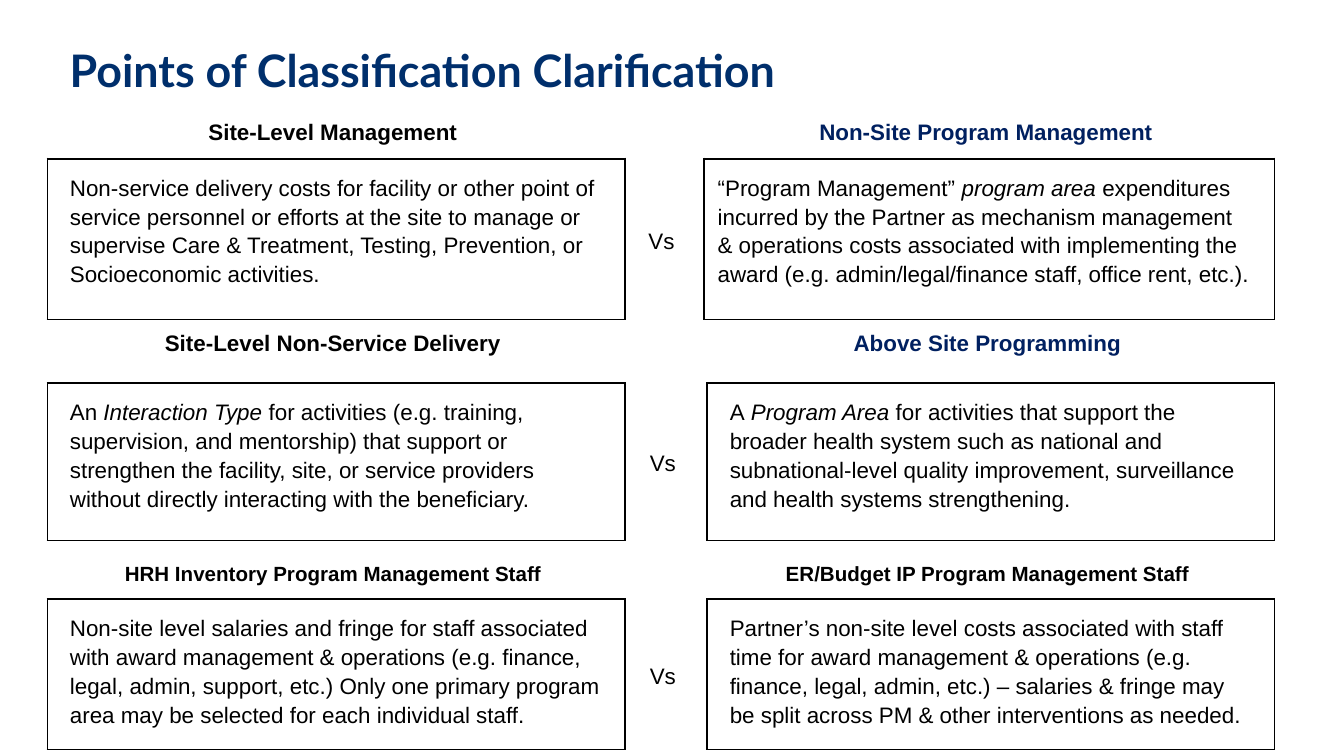
from lxml import etree
from pptx import Presentation
from pptx import util as u
from pptx.dml.color import RGBColor
from pptx.enum import text
from pptx.oxml.ns import qn

COLORS = {"title": "002F6C", "ink": "000000", "navy": "002060"}
NO_STYLE = "{2D5ABB26-0587-4C30-8999-92F81FD0307C}"
THIN, THICK = 0.56, 1.11
CENTER, LEFT = text.PP_ALIGN.CENTER, text.PP_ALIGN.LEFT
TOP, MIDDLE, BOTTOM = (text.MSO_ANCHOR.TOP, text.MSO_ANCHOR.MIDDLE,
                       text.MSO_ANCHOR.BOTTOM)

# Each comparison: box, column widths, row heights, headings, definitions.
# Definitions are lists of (words, italic).
COMPARISONS = [
    dict(
        box=(0.35, 0.75, 9.13, 1.61), cols=(4.3, 0.59, 4.24), rows=(0.24, 1.2),
        headings=("Site-Level Management", "Non-Site Program Management"),
        right_color="navy", size=12, anchor=BOTTOM, before=(0, 0), indents=(0.07, 0),
        definitions=(
            [("Non-service delivery costs for facility or other point of service personnel or "
              "efforts at the site to manage or supervise Care & Treatment, Testing, "
              "Prevention, or Socioeconomic activities.", False)],
            [("“Program Management” ", False), ("program area", True),
             (" expenditures incurred by the Partner as mechanism management & operations "
              "costs associated with implementing the award (e.g. admin/legal/finance staff, "
              "office rent, etc.).", False)])),
    dict(
        box=(0.35, 2.23, 9.13, 1.79), cols=(4.3, 0.61, 4.22), rows=(0.62, 1.17),
        headings=("Site-Level Non-Service Delivery", "Above Site Programming"),
        right_color="navy", size=12, anchor=MIDDLE, before=(12, 12), indents=(0.07, 0.07),
        definitions=(
            [("An ", False), ("Interaction Type", True),
             (" for activities (e.g. training, supervision, and mentorship) that support or "
              "strengthen the facility, site, or service providers without directly "
              "interacting with the beneficiary.", False)],
            [("A", False), (" Program Area", True),
             (" for activities that support the broader health system such as national and "
              "subnational-level quality improvement, surveillance and health systems "
              "strengthening.", False)])),
    dict(
        box=(0.35, 3.91, 9.13, 1.65), cols=(4.3, 0.61, 4.22), rows=(0.55, 1),
        headings=("HRH Inventory Program Management Staff",
                  "ER/Budget IP Program Management Staff"),
        right_color="ink", size=11, anchor=BOTTOM, before=(0, 12), indents=(0.07, 0.07),
        definitions=(
            [("Non-site level salaries and fringe for staff associated with award management "
              "& operations (e.g. finance, legal, admin, support, etc.) Only one primary "
              "program area may be selected for each individual staff.", False)],
            [("Partner’s non-site level costs associated with staff time for award management "
              "& operations (e.g. finance, legal, admin, etc.) – salaries & fringe may be "
              "split across PM & other interventions as needed.", False)])),
]


def add_run(paragraph, words, size, color="ink", bold=False, italic=False, font="Arial"):
    run = paragraph.add_run()
    run.text = words
    run.font.size = u.Pt(size)
    run.font.name = font
    run.font.bold = bold
    run.font.italic = italic
    run.font.color.rgb = RGBColor.from_string(COLORS[color])


def set_margins(holder):
    for side in ("left", "right", "top", "bottom"):
        setattr(holder, f"margin_{side}", u.Inches(0.1))


def set_borders(cell, **widths):
    """Draw the given sides (L, R, T, B), widths in points."""
    props = cell._tc.get_or_add_tcPr()
    drawn = [side for side in "LRTB" if side in widths]
    for place, side in enumerate(drawn):
        line = etree.Element(qn(f"a:ln{side}"), w=str(u.Pt(widths[side])))
        fill = etree.SubElement(line, qn("a:solidFill"))
        etree.SubElement(fill, qn("a:srgbClr"), val=COLORS["ink"])
        props.insert(place, line)


def fill_cell(cell, runs, size=12, anchor=TOP, align=LEFT, indent=0.07, before=0):
    """Format a cell and add its runs, each (words, run options)."""
    set_margins(cell)
    cell.vertical_anchor = anchor
    cell.fill.background()
    paragraph = cell.text_frame.paragraphs[0]
    paragraph.alignment = align
    paragraph.line_spacing = 1.15
    paragraph.space_before = u.Pt(before)
    props = paragraph._p.get_or_add_pPr()
    props.set("marL", str(u.Inches(indent)))
    props.set("marR", str(u.Inches(0.07)))
    for words, options in runs:
        add_run(paragraph, words, size, **options)
    # The end mark keeps the default text size from growing the row
    etree.SubElement(paragraph._p, qn("a:endParaRPr"), sz=str(size * 100))


def add_title(slide, box):
    frame = slide.shapes.add_textbox(*map(u.Inches, box)).text_frame
    frame.word_wrap = True
    frame.vertical_anchor = BOTTOM
    set_margins(frame)
    add_run(frame.paragraphs[0], "Points of Classification Clarification", 24,
            "title", bold=True, font="Lato")


def add_comparison(slide, box, cols, rows, headings, right_color, size, anchor,
                   before, indents, definitions):
    frame = slide.shapes.add_table(2, 3, *map(u.Inches, box))
    table = frame.table
    table.first_row = table.horz_banding = False
    table._tbl.tblPr.find(qn("a:tableStyleId")).text = NO_STYLE
    for column, width in zip(table.columns, cols):
        column.width = u.Inches(width)
    for row, height in zip(table.rows, rows):
        row.height = u.Inches(height)
    frame.height = u.Inches(box[3])  # row heights are minimums within this

    # Headings and definitions, left and right
    for side, col in enumerate((0, 2)):
        heading = table.cell(0, col)
        color = ("ink", right_color)[side]
        fill_cell(heading, [(headings[side], dict(color=color, bold=True)), (" ", {})],
                  size, anchor, CENTER, before=before[side])
        set_borders(heading, B=THICK)

        definition = table.cell(1, col)
        fill_cell(definition,
                  [(words, dict(italic=italic)) for words, italic in definitions[side]],
                  indent=indents[side])
        left, right = ((THIN, THICK), (THICK, THIN))[side]
        set_borders(definition, L=left, R=right, T=THICK, B=THIN)

    # Middle column
    fill_cell(table.cell(0, 1), [], size=10)
    versus = table.cell(1, 1)
    fill_cell(versus, [("Vs ", {})], anchor=MIDDLE, align=CENTER)
    set_borders(versus, L=THICK, R=THICK)


def main():
    prs = Presentation()
    prs.slide_width = u.Inches(10)
    prs.slide_height = prs.slide_width * 9 // 16
    slide = prs.slides.add_slide(prs.slide_layouts[6])
    add_title(slide, (0.42, 0.32, 8.5, 0.5))
    for comparison in COMPARISONS:
        add_comparison(slide, **comparison)
    prs.save("out.pptx")


if __name__ == "__main__":
    main()
